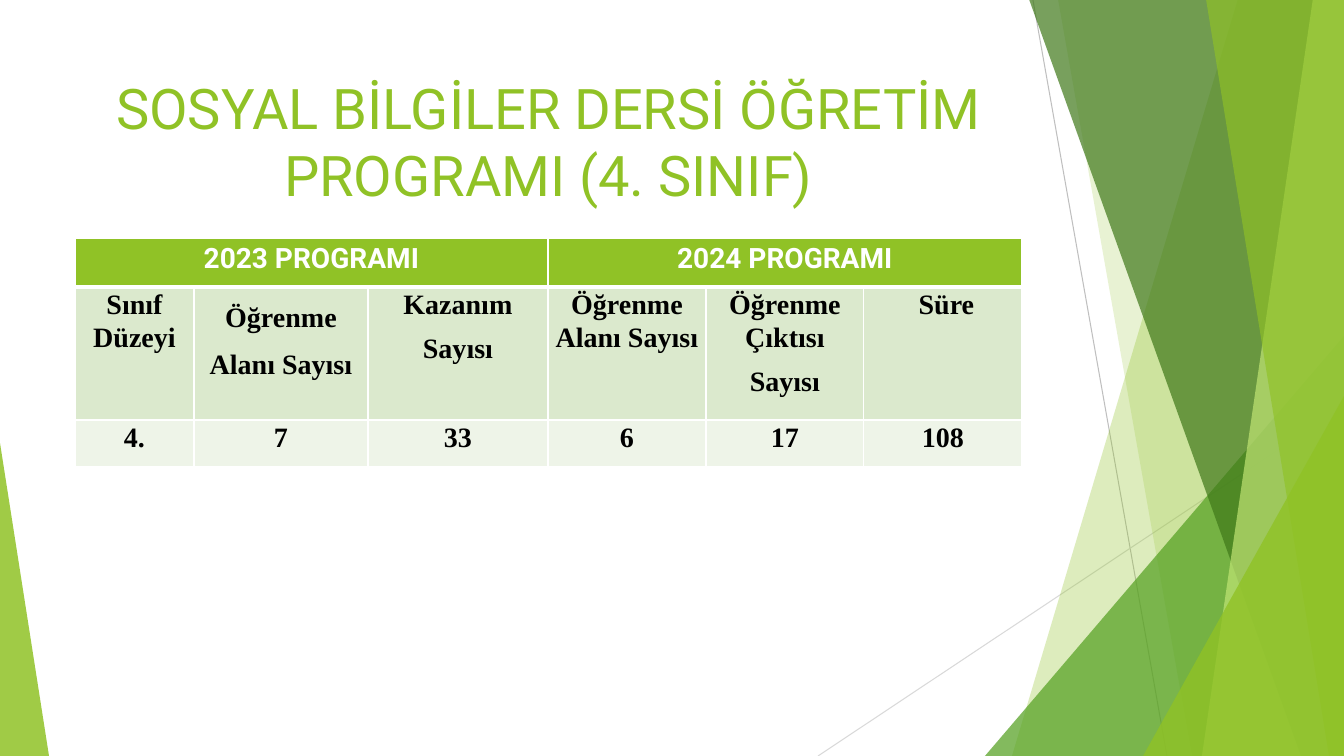
"""Build the slide comparing the 2023 and 2024 fourth-grade social studies programmes."""
from dataclasses import dataclass

import lxml.etree
import pptx
import pptx.dml.color
import pptx.enum.shapes
import pptx.enum.text
import pptx.oxml.ns
import pptx.util

WIDTH, HEIGHT = 1344, 756
SCALE = 12192000 / WIDTH
GREEN, WHITE, BLACK = "90C226", "FFFFFF", "000000"
HEADING_FONT, BODY_FONT = "Roboto", "Times New Roman"


@dataclass
class Band:
    top_x: int
    bottom_x: int
    color: str
    opacity: int


@dataclass
class Wedge:
    left: int
    top: int
    width: int
    apex: int
    color: str
    opacity: int


@dataclass
class Ray:
    x1: int
    y1: int
    x2: int
    y2: int
    color: str


@dataclass
class BodyRow:
    height: int
    fill: str
    texts: list[str]


RAYS = [Ray(1033, 0, 1167, HEIGHT, "BFBFBF"), Ray(WIDTH, 406, 818, HEIGHT, "D9D9D9")]
FACETS = [
    Band(1238, 1012, GREEN, 30),
    Band(1058, 1192, GREEN, 20),
    Wedge(985, 336, 359, 1, "54A021", 72),
    Band(1029, 1301, "3F7819", 70),
    Band(1313, 1202, "C0E474", 70),
    Band(1206, 1329, GREEN, 65),
    Wedge(1143, 396, 201, 1, GREEN, 80),
    Wedge(0, 443, 49, 0, GREEN, 85),
]
COLUMNS = [119, 174, 180, 158, 158, 158]
HEADER_HEIGHT = 49
HEADERS = {0: "2023 PROGRAMI", 3: "2024 PROGRAMI"}
ROWS = [
    BodyRow(133, "DBE9CD", ["Sınıf Düzeyi", "Öğrenme Alanı Sayısı", "Kazanım\nSayısı",
                            "Öğrenme Alanı Sayısı", "Öğrenme Çıktısı\nSayısı", " Süre"]),
    BodyRow(47, "EEF4E8", ["4.", "7", "33", "6", "17", "108"]),
]


def px(n: float) -> int:
    return round(n * SCALE)


def rgb(color: str) -> pptx.dml.color.RGBColor:
    return pptx.dml.color.RGBColor.from_string(color)


def write(tf, text: str, *, size: int = 20, font: str = BODY_FONT, color: str = BLACK,
          bold: bool = True, spacing: float = 1.0, after: int = 0) -> None:
    for i, line in enumerate(text.split("\n")):
        p = tf.add_paragraph() if i else tf.paragraphs[0]
        p.alignment = pptx.enum.text.PP_ALIGN.CENTER
        p.line_spacing = spacing
        p.space_before, p.space_after = pptx.util.Pt(0), pptx.util.Pt(after)
        r = p.add_run()
        r.text = line
        r.font.size, r.font.name, r.font.bold = pptx.util.Pt(size), font, bold
        r.font.color.rgb = rgb(color)


def add_ray(shapes, ray: Ray) -> None:
    line = shapes.add_connector(pptx.enum.shapes.MSO_CONNECTOR.STRAIGHT,
                                px(ray.x1), px(ray.y1), px(ray.x2), px(ray.y2))
    line.line.color.rgb = rgb(ray.color)
    line.line.width = pptx.util.Pt(0.75)
    lxml.etree.SubElement(line._element.spPr, pptx.oxml.ns.qn("a:effectLst"))


def add_facet(shapes, facet: Band | Wedge) -> None:
    if isinstance(facet, Band):
        builder = shapes.build_freeform(facet.top_x, -1, scale=SCALE)
        builder.add_line_segments([(WIDTH, -1), (WIDTH, HEIGHT), (facet.bottom_x, HEIGHT)])
        sp = builder.convert_to_shape()
    else:
        sp = shapes.add_shape(pptx.enum.shapes.MSO_SHAPE.ISOSCELES_TRIANGLE, px(facet.left),
                              px(facet.top), px(facet.width), px(HEIGHT - facet.top))
        sp.adjustments[0] = facet.apex
    sp.shadow.inherit = False
    sp.line.fill.background()
    sp.fill.solid()
    sp.fill.fore_color.rgb = rgb(facet.color)
    clr = sp._element.spPr.find(".//" + pptx.oxml.ns.qn("a:srgbClr"))
    lxml.etree.SubElement(clr, pptx.oxml.ns.qn("a:alpha"), val=str(facet.opacity * 1000))


def style_cell(cell, fill: str, inset_x: int, inset_y: int, top: int, bottom: int) -> None:
    tc_pr = cell._tc.get_or_add_tcPr()
    for side, width in {"lnL": 1, "lnR": 1, "lnT": top, "lnB": bottom}.items():
        ln = lxml.etree.SubElement(tc_pr, pptx.oxml.ns.qn("a:" + side),
                                   w=str(pptx.util.Pt(width)))
        solid = lxml.etree.SubElement(ln, pptx.oxml.ns.qn("a:solidFill"))
        lxml.etree.SubElement(solid, pptx.oxml.ns.qn("a:srgbClr"), val=WHITE)
    cell.fill.solid()
    cell.fill.fore_color.rgb = rgb(fill)
    cell.margin_left = cell.margin_right = px(inset_x)
    cell.margin_top = cell.margin_bottom = px(inset_y)


def add_programme_table(shapes) -> None:
    heights = [HEADER_HEIGHT] + [row.height for row in ROWS]
    table = shapes.add_table(len(heights), len(COLUMNS), px(75), px(238),
                             px(sum(COLUMNS)), px(sum(heights))).table
    for column, width in zip(table.columns, COLUMNS):
        column.width = px(width)
    for row, height in zip(table.rows, heights):
        row.height = px(height)
    for c in range(len(COLUMNS)):
        style_cell(table.cell(0, c), GREEN, 8, 5, 1, 3)
    for c, text in HEADERS.items():
        table.cell(0, c).merge(table.cell(0, c + 2))
        write(table.cell(0, c).text_frame, text, font=HEADING_FONT, color=WHITE)
    for r, row in enumerate(ROWS, start=1):
        for c, text in enumerate(row.texts):
            cell = table.cell(r, c)
            style_cell(cell, row.fill, 6, 0, 3 if r == 1 else 1, 1)
            write(cell.text_frame, text, spacing=1.5 if (r, c) == (1, 1) else 1.07, after=8)


def set_title(title) -> None:
    title.left, title.top, title.width, title.height = px(75), px(68), px(947), px(145)
    tf = title.text_frame
    tf.word_wrap = True
    tf.auto_size = pptx.enum.text.MSO_AUTO_SIZE.NONE
    tf.vertical_anchor = pptx.enum.text.MSO_ANCHOR.MIDDLE
    write(tf, "SOSYAL BİLGİLER DERSİ ÖĞRETİM PROGRAMI (4. SINIF)",
          size=40, font=HEADING_FONT, color=GREEN, bold=False)


def main() -> None:
    prs = pptx.Presentation()
    prs.slide_width, prs.slide_height = px(WIDTH), px(HEIGHT)
    s = prs.slides.add_slide(prs.slide_layouts[5])
    for ray in RAYS:
        add_ray(s.shapes, ray)
    for facet in FACETS:
        add_facet(s.shapes, facet)
    set_title(s.shapes.title)
    add_programme_table(s.shapes)
    prs.save("out.pptx")


if __name__ == "__main__":
    main()
